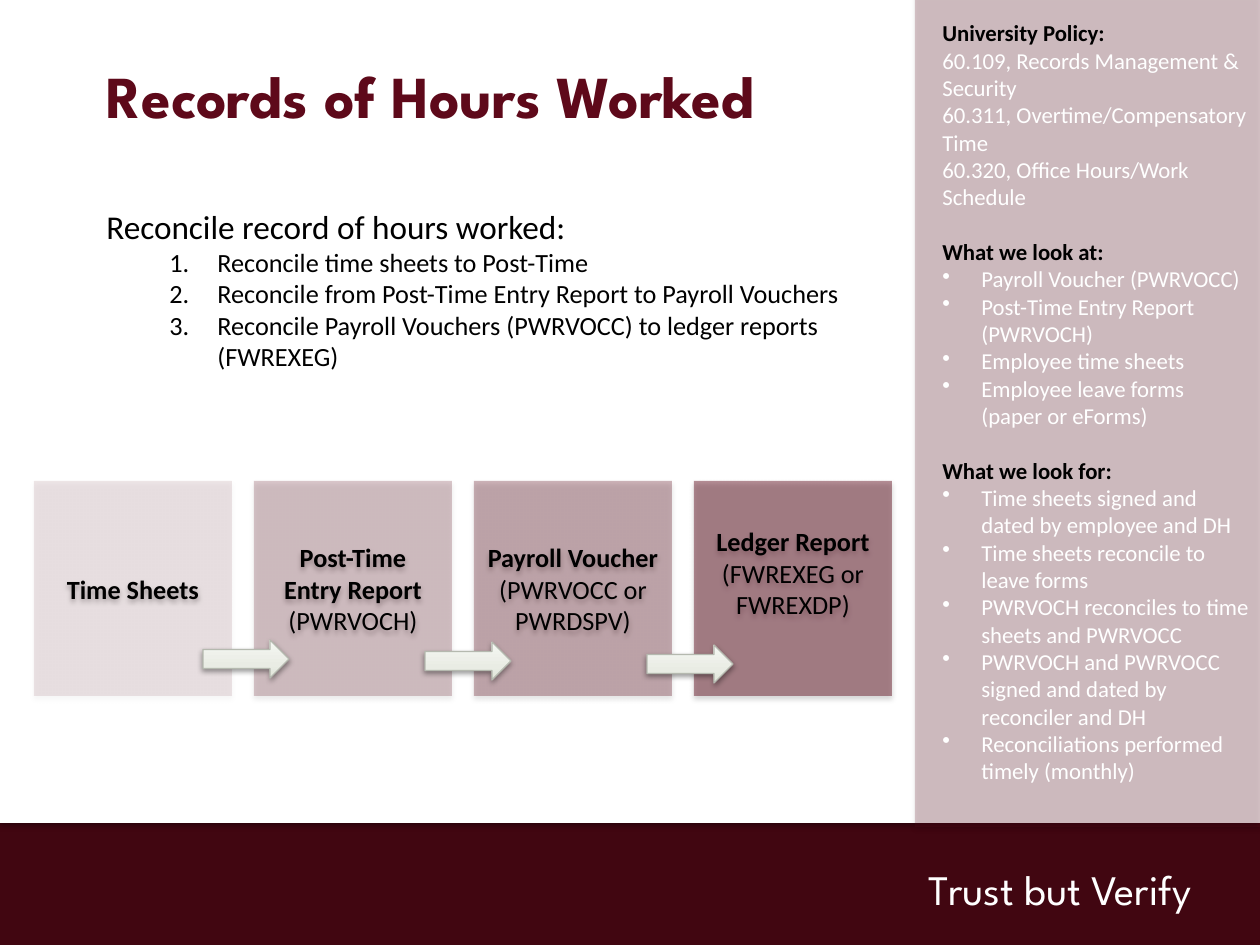
from dataclasses import dataclass

from pptx import Presentation
from pptx.dml.color import RGBColor
from pptx.enum.shapes import MSO_SHAPE
from pptx.enum.text import MSO_ANCHOR, PP_ALIGN
from pptx.oxml.ns import qn
from pptx.util import Emu, Pt
from lxml.etree import SubElement


@dataclass(frozen=True)
class Theme:
    maroon: str = "5E091A"
    band: str = "410611"
    white: str = "FFFFFF"
    black: str = "000000"
    arrow_line: str = "B5B9AF"
    arrow_stops: tuple = ((0, "E0E5D9"), (35, "E9ECE4"), (100, "F6F8F4"))
    display_font: str = "League Spartan"
    body_font: str = "Calibri"
    title_size: int = 34
    motto_size: int = 24
    lead_size: int = 19
    step_size: int = 15
    sidebar_size: int = 13


THEME = Theme()
SIDEBAR = [
    ("University Policy:", False, [
        "60.109, Records Management & Security",
        "60.311, Overtime/Compensatory Time",
        "60.320, Office Hours/Work Schedule",
    ]),
    ("What we look at:", True, [
        "Payroll Voucher (PWRVOCC)",
        "Post-Time Entry Report (PWRVOCH)",
        "Employee time sheets",
        "Employee leave forms (paper or eForms)",
    ]),
    ("What we look for:", True, [
        "Time sheets signed and dated by employee and DH",
        "Time sheets reconcile to leave forms",
        "PWRVOCH reconciles to time sheets and PWRVOCC",
        "PWRVOCH and PWRVOCC signed and dated by reconciler and DH",
        "Reconciliations performed timely (monthly)",
    ]),
]
STEPS = [
    "Reconcile time sheets to Post-Time",
    "Reconcile from Post-Time Entry Report to Payroll Vouchers",
    "Reconcile Payroll Vouchers (PWRVOCC) to ledger reports (FWREXEG)",
]
# Bold lines, plain lines, fill opacity in percent, bottom inset
CARDS = [
    (["Time Sheets"], [], 10, 6),
    (["Post-Time", "Entry Report"], ["(PWRVOCH)"], 22, 6),
    (["Payroll Voucher"], ["(PWRVOCC or", "PWRDSPV)"], 30, 6),
    (["Ledger Report"], ["(FWREXEG or FWREXDP)"], 45, 38),
]


def px(length):
    return Emu(round(length * 914400 / 126))


def rgb(color):
    return RGBColor.from_string(color)


def add_shadow(shape, opacity, blur, distance):
    effects = shape._element.spPr.find(qn("a:effectLst"))
    shadow = SubElement(effects, qn("a:outerShdw"), blurRad=str(Pt(blur)),
                        dist=str(Pt(distance)), dir="5400000", rotWithShape="0")
    color = SubElement(shadow, qn("a:srgbClr"), val=THEME.black)
    SubElement(color, qn("a:alpha"), val=str(opacity * 1000))


def add_panel(slide, box, color, opacity=100, shadow=True):
    panel = slide.shapes.add_shape(MSO_SHAPE.RECTANGLE, *map(px, box))
    panel.fill.solid()
    panel.fill.fore_color.rgb = rgb(color)
    panel.line.fill.background()
    panel.shadow.inherit = False
    if opacity < 100:
        tint = panel._element.spPr.find(qn("a:solidFill"))[0]
        SubElement(tint, qn("a:alpha"), val=str(opacity * 1000))
    if shadow:
        add_shadow(panel, 35, 3.1, 1.8)
    return panel


def add_text_box(slide, box, anchor=MSO_ANCHOR.TOP):
    frame = slide.shapes.add_textbox(*map(px, box)).text_frame
    frame.word_wrap = True
    frame.vertical_anchor = anchor
    return frame


def add_line(frame, text, size, color=THEME.black, bold=False,
             font=THEME.body_font, align=PP_ALIGN.LEFT):
    """Write into the empty first paragraph, or append a new one."""
    first = frame.paragraphs[0]
    line = frame.add_paragraph() if first.runs else first
    line.text = text
    line.alignment = align
    for run in line.runs:
        run.font.name = font
        run.font.size = Pt(size)
        run.font.bold = bold
        run.font.color.rgb = rgb(color)
    return line


def add_marker(line, tag, left, hanging, **attributes):
    properties = line._p.get_or_add_pPr()
    properties.set("marL", str(px(left)))
    properties.set("indent", str(-px(hanging)))
    SubElement(properties, qn(tag), **attributes)


def add_card(slide, left, bold_lines, plain_lines, opacity, bottom):
    card = add_panel(slide, (left, 481, 198, 215), THEME.maroon, opacity)
    frame = card.text_frame
    frame.word_wrap = True
    frame.vertical_anchor = MSO_ANCHOR.MIDDLE
    frame.margin_bottom = px(bottom)
    for lines, bold in ((bold_lines, True), (plain_lines, False)):
        for text in lines:
            add_line(frame, text, THEME.step_size, bold=bold, align=PP_ALIGN.CENTER)


def add_arrow(slide, left, top):
    arrow = slide.shapes.add_shape(MSO_SHAPE.RIGHT_ARROW,
                                   *map(px, (left, top, 86, 38)))
    arrow.fill.gradient()
    arrow.fill.gradient_angle = 90
    stops = arrow._element.spPr.find(qn("a:gradFill")).find(qn("a:gsLst"))
    stops.clear()
    for position, color in THEME.arrow_stops:
        stop = SubElement(stops, qn("a:gs"), pos=str(position * 1000))
        SubElement(stop, qn("a:srgbClr"), val=color)
    arrow.line.color.rgb = rgb(THEME.arrow_line)
    arrow.line.width = Pt(0.75)
    arrow.shadow.inherit = False
    add_shadow(arrow, 38, 3.1, 1.6)


def add_sidebar(slide):
    add_panel(slide, (915, -7, 345, 834), THEME.maroon, 22)
    frame = add_text_box(slide, (930, 13, 332, 815))
    size = THEME.sidebar_size
    for index, (heading, bulleted, items) in enumerate(SIDEBAR):
        line = add_line(frame, heading, size, bold=True)
        if index:
            line.space_before = Pt(15.6)
        for item in items:
            line = add_line(frame, item, size, THEME.white)
            if bulleted:
                add_marker(line, "a:buChar", 39, 39, char="•")


def main():
    deck = Presentation()
    deck.slide_width, deck.slide_height = px(1260), px(945)
    slide = deck.slides.add_slide(deck.slide_layouts[6])

    # Footer band and page panel
    add_panel(slide, (0, 819, 1260, 126), THEME.band, shadow=False)
    motto = add_text_box(slide, (726, 857, 478, 63))
    add_line(motto, "Trust but Verify", THEME.motto_size, THEME.white,
             font=THEME.display_font, align=PP_ALIGN.RIGHT)
    add_panel(slide, (0, -7, 1260, 830), THEME.white)

    # Title and numbered steps
    title = add_text_box(slide, (94, -7, 1071, 203), MSO_ANCHOR.MIDDLE)
    add_line(title, "Records of Hours Worked", THEME.title_size, THEME.maroon,
             bold=True, font=THEME.display_font)
    steps = add_text_box(slide, (94, 200, 796, 212))
    add_line(steps, "Reconcile record of hours worked:", THEME.lead_size)
    for step in STEPS:
        line = add_line(steps, step, THEME.step_size)
        add_marker(line, "a:buAutoNum", 111, 48, type="arabicPeriod")

    add_sidebar(slide)

    # Document flow: cards, then the arrows across their gaps
    for index, card in enumerate(CARDS):
        add_card(slide, 34 + 220 * index, *card)
    for index in range(len(CARDS) - 1):
        add_arrow(slide, 203 + 222 * index, 640 + 5 * index // 2)

    deck.save("out.pptx")


if __name__ == "__main__":
    main()
